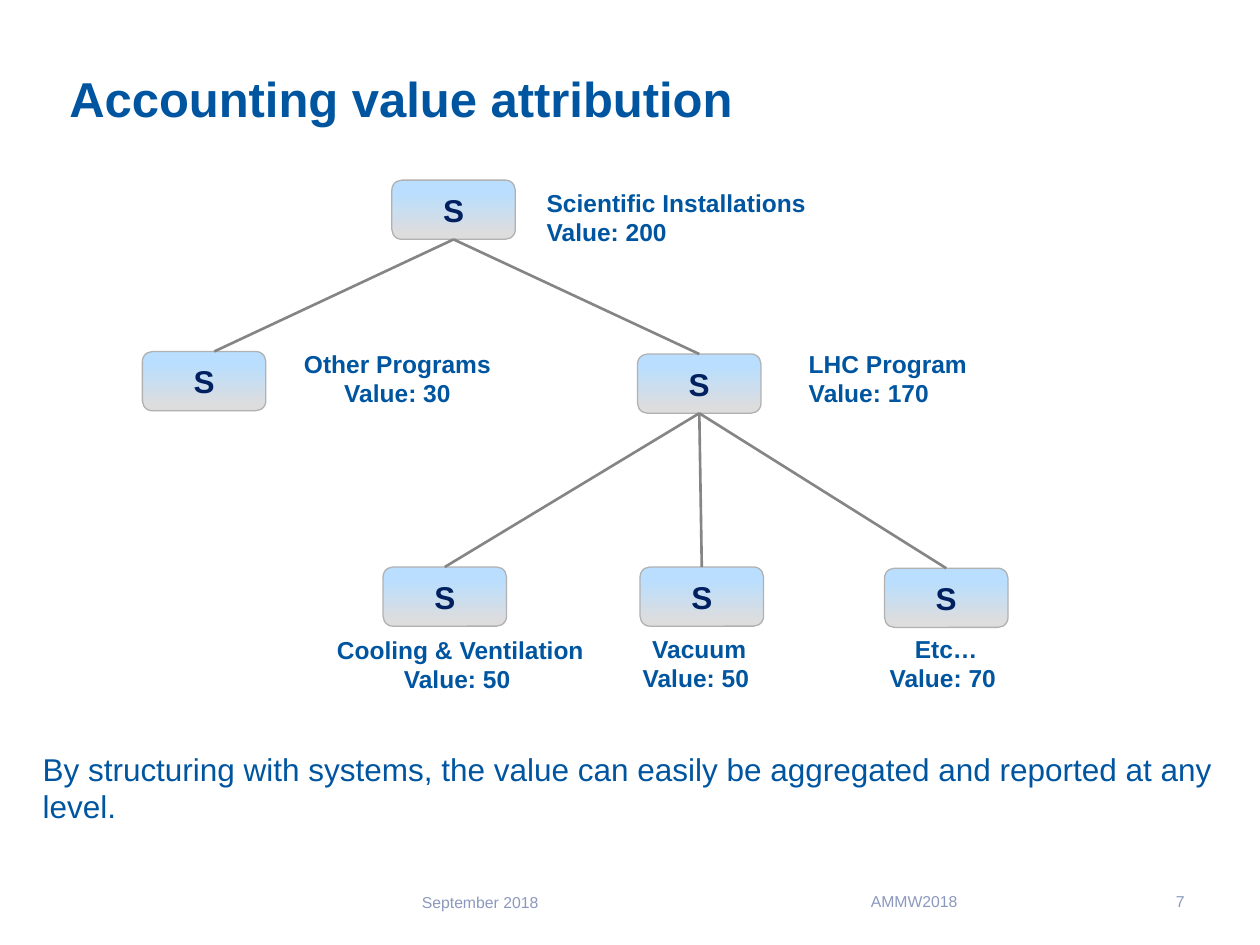
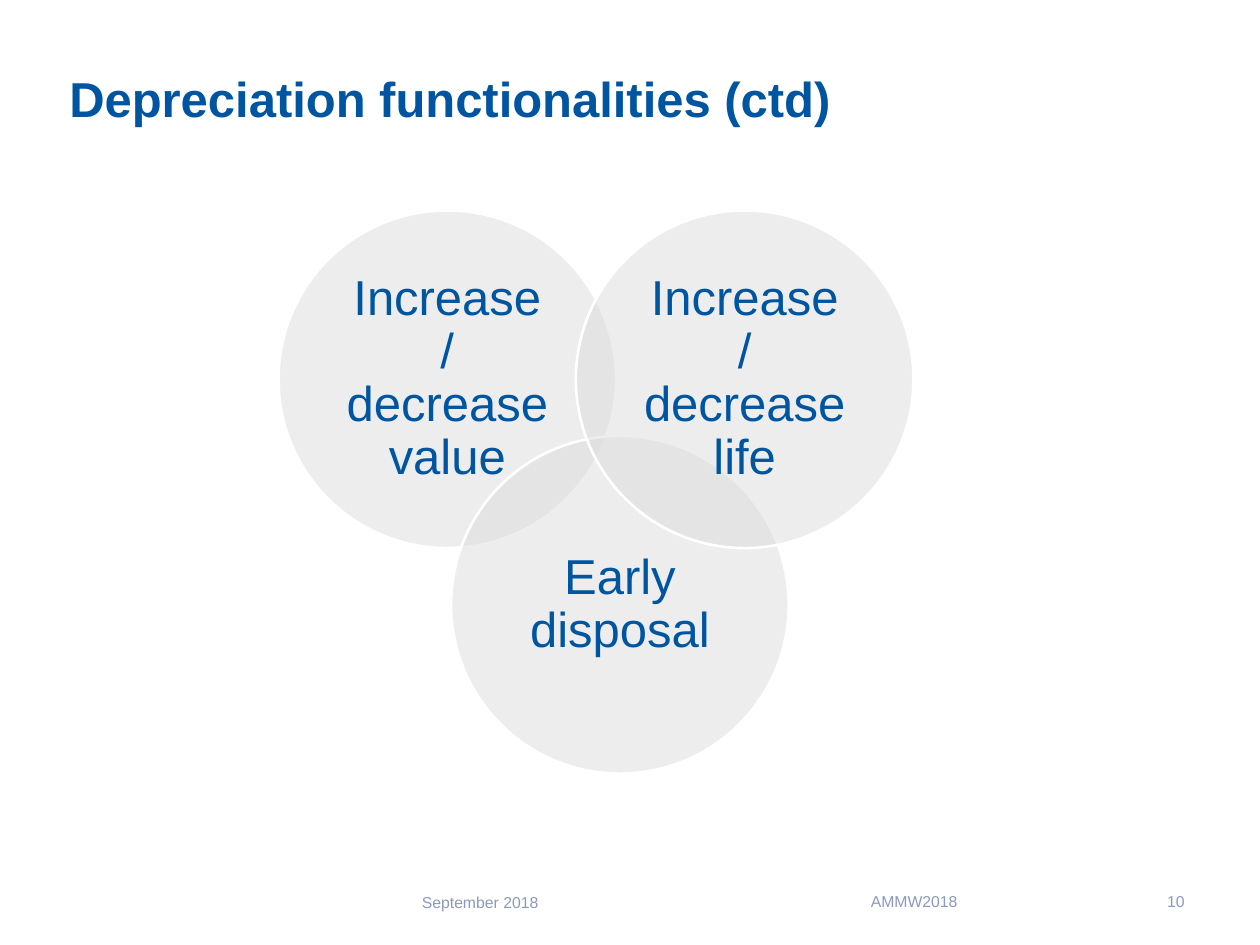
"""Build two slides: a value attribution tree and a depreciation Venn diagram."""
from dataclasses import dataclass

from pptx import Presentation
from pptx.dml.color import RGBColor
from pptx.enum.shapes import MSO_CONNECTOR as Connector, MSO_SHAPE as Shape
from pptx.enum.text import MSO_ANCHOR as Anchor, MSO_AUTO_SIZE as AutoSize, PP_ALIGN as Align
from pptx.oxml.ns import qn
from pptx.oxml.xmlchemy import OxmlElement
from pptx.util import Inches, Pt


@dataclass(frozen=True)
class Theme:
    font: str = "Arial"
    blue: str = "0055A0"
    navy: str = "002060"
    footer: str = "8C99BE"
    line: str = "858585"
    node_border: str = "B1B1B1"
    node_top: str = "B9DEFF"
    grey: str = "DDDDDD"
    white: str = "FFFFFF"
    title_size: int = 28
    body_size: int = 18
    label_size: int = 14
    footer_size: int = 9
    thick: float = 1.5
    thin: float = 0.75


THEME = Theme()

TREE_TITLE = "Accounting value attribution"
TREE_PAGE = "7"
TREE_NOTE = ("By structuring with systems, the value can easily be aggregated "
             "and reported at any level.")
NODE_SIZE = (0.98, 0.47)
NODES = {
    "installations": (3.11, 1.43),
    "other": (1.13, 2.79),
    "lhc": (5.06, 2.81),
    "cooling": (3.04, 4.5),
    "vacuum": (5.08, 4.5),
    "etc": (7.02, 4.51),
}
BRANCHES = [
    ("installations", "other", (1.7, 2.79)),
    ("installations", "lhc", None),
    ("lhc", "cooling", None),
    ("lhc", "vacuum", None),
    ("lhc", "etc", None),
]
LABELS = [
    (["Scientific Installations", "Value: 200"], (4.24, 1.44, 2.27, 0.57), Align.LEFT),
    (["Other Programs", "Value: 30"], (2.29, 2.72, 1.73, 0.57), Align.CENTER),
    (["LHC Program", "Value: 170"], (6.32, 2.72, 1.51, 0.57), Align.LEFT),
    (["Cooling & Ventilation\vValue: 50 "], (2.57, 4.99, 2.17, 0.57), Align.CENTER),
    (["Vacuum\vValue: 50 "], (5, 4.98, 1.1, 0.57), Align.CENTER),
    (["Etc…\vValue: 70 "], (6.96, 4.98, 1.1, 0.57), Align.CENTER),
]

VENN_TITLE = "Depreciation functionalities (ctd)"
VENN_PAGE = "10"
CIRCLE_SIZE = 2.68
CIRCLES = [
    ("Increase / decrease value", 2.21, 1.67),
    ("Early disposal", 3.58, 3.46),
    ("Increase / decrease life", 4.57, 1.67),
]

FOOTERS = [
    ("September 2018", (3.25, 6.96, 2.33, 0.4), Align.LEFT),
    ("AMMW2018", (5.67, 6.95, 3.17, 0.4), Align.CENTER),
]
PAGE_BOX = (8.95, 6.95, 0.55, 0.4)


def color(value):
    return RGBColor.from_string(value)


def write(shape, lines, size, ink, bold=False, align=Align.LEFT, anchor=Anchor.MIDDLE,
          wrap=True, inset=None, spacing=None):
    frame = shape.text_frame
    frame.word_wrap = wrap
    frame.vertical_anchor = anchor
    if inset is not None:
        frame.margin_left = frame.margin_right = Inches(inset)
        frame.margin_top = frame.margin_bottom = Inches(inset)
    frame.text = "\n".join(lines)
    for paragraph in frame.paragraphs:
        paragraph.alignment = align
        paragraph.line_spacing = spacing
        paragraph.font.name = THEME.font
        paragraph.font.size = Pt(size)
        paragraph.font.bold = bold
        paragraph.font.color.rgb = color(ink)


def add_text(slide, lines, box, size, ink, **style):
    shape = slide.shapes.add_textbox(*map(Inches, box))
    write(shape, lines, size, ink, **style)
    return shape


def add_slide(presentation, title, page):
    slide = presentation.slides.add_slide(presentation.slide_layouts[6])
    add_text(slide, [title], (0.5, 0.26, 9, 1.03), THEME.title_size, THEME.blue,
             bold=True, inset=0.05)
    for text, box, align in [*FOOTERS, (page, PAGE_BOX, Align.RIGHT)]:
        add_text(slide, [text], box, THEME.footer_size, THEME.footer, align=align)
    return slide


def outline(shape, ink, width):
    shape.shadow.inherit = False
    shape.line.color.rgb = color(ink)
    shape.line.width = Pt(width)


def add_node(slide, left, top):
    node = slide.shapes.add_shape(Shape.ROUNDED_RECTANGLE, *map(Inches, (left, top, *NODE_SIZE)))
    outline(node, THEME.node_border, THEME.thin)
    node.fill.gradient()
    node.fill.gradient_angle = 270
    stops = [(0.19, THEME.node_top), (0.92, THEME.grey)]
    for stop, (position, ink) in zip(node.fill.gradient_stops, stops):
        stop.position = position
        stop.color.rgb = color(ink)
    write(node, ["S"], THEME.body_size, THEME.navy, bold=True, align=Align.CENTER)
    return node


def add_branch(slide, parent, child, loose_end):
    end = map(Inches, loose_end or (0, 0))
    branch = slide.shapes.add_connector(Connector.STRAIGHT, 0, 0, *end)
    branch.begin_connect(parent, 2)
    if not loose_end:
        branch.end_connect(child, 0)
    branch.line.color.rgb = color(THEME.line)
    branch.line.width = Pt(THEME.thick)
    branch.element.spPr.append(OxmlElement("a:effectLst"))


def add_circle(group, text, left, top):
    circle = group.shapes.add_shape(
        Shape.OVAL, *map(Inches, (left, top, CIRCLE_SIZE, CIRCLE_SIZE)))
    circle.fill.solid()
    circle.fill.fore_color.rgb = color(THEME.grey)
    alpha = OxmlElement("a:alpha")
    alpha.set("val", "50000")
    circle.element.spPr.find(f"{qn('a:solidFill')}/{qn('a:srgbClr')}").append(alpha)
    outline(circle, THEME.white, THEME.thick)
    write(circle, [text], THEME.title_size, THEME.blue, align=Align.CENTER,
          inset=0.12, spacing=0.9)


def build_tree(presentation):
    slide = add_slide(presentation, TREE_TITLE, TREE_PAGE)
    for lines, box, align in LABELS:
        label = add_text(slide, lines, box, THEME.label_size, THEME.blue, bold=True,
                         align=align, anchor=Anchor.TOP, wrap=False)
        label.text_frame.auto_size = AutoSize.SHAPE_TO_FIT_TEXT
    add_text(slide, [TREE_NOTE], (0.24, 5.9, 9.67, 0.71), THEME.body_size, THEME.blue,
             anchor=Anchor.TOP)
    nodes = {name: add_node(slide, *place) for name, place in NODES.items()}
    for parent, child, loose_end in BRANCHES:
        add_branch(slide, nodes[parent], nodes[child], loose_end)


def build_venn(presentation):
    slide = add_slide(presentation, VENN_TITLE, VENN_PAGE)
    group = slide.shapes.add_group_shape()
    for circle in CIRCLES:
        add_circle(group, *circle)


def main():
    presentation = Presentation()
    presentation.slide_width = Inches(10)
    presentation.slide_height = Inches(7.5)
    build_tree(presentation)
    build_venn(presentation)
    presentation.save("out.pptx")


if __name__ == "__main__":
    main()
